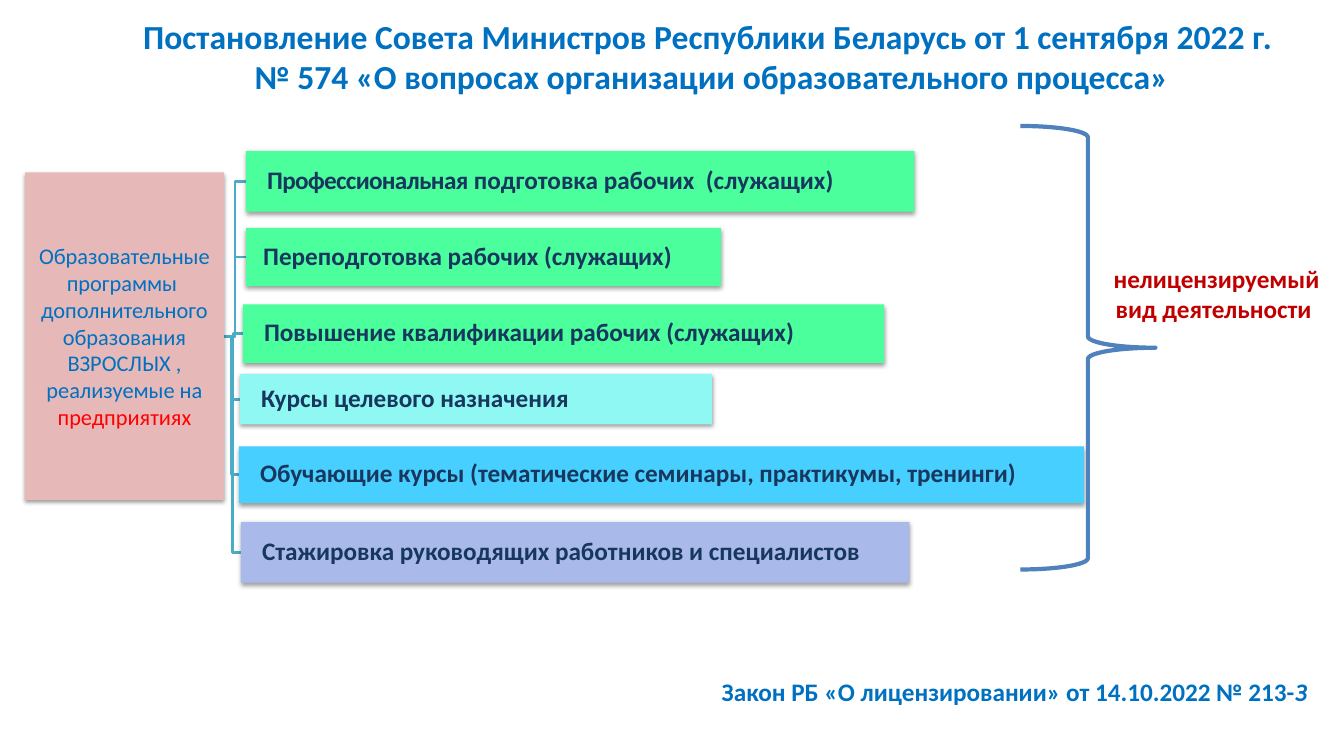
from lxml import etree
from pptx import Presentation
from pptx.dml.color import RGBColor
from pptx.enum.shapes import MSO_SHAPE
from pptx.enum.text import MSO_ANCHOR, PP_ALIGN
from pptx.oxml.ns import qn
from pptx.util import Inches, Pt

RECTANGLE = MSO_SHAPE.RECTANGLE
RIGHT_BRACE = MSO_SHAPE.RIGHT_BRACE
MIDDLE = MSO_ANCHOR.MIDDLE
CENTER = PP_ALIGN.CENTER
LEFT = PP_ALIGN.LEFT
BLUE = "0070C0"
NAVY = "17375E"
GREEN = "4BFF9C"


def color(value):
    return RGBColor.from_string(value)


def write(shape, parts, size, bold, align):
    frame = shape.text_frame
    para = frame.paragraphs[0]
    para.text = "".join(text for text, tone in parts[:1])
    for text, tone in parts[1:]:
        para.add_run().text = text
    para.alignment = align
    for position, span in enumerate(para.runs):
        tone = parts[min(position, len(parts) - 1)][1]
        span.font.name = "Calibri"
        span.font.size = Pt(size)
        span.font.bold = bold
        span.font.color.rgb = color(tone)
    return para


deck = Presentation()
deck.slide_width = Inches(13.33)
deck.slide_height = Inches(7.5)
page = deck.slides.add_slide(deck.slide_layouts[6])

root_left, root_top, root_width, root_height = 0.25, 1.71, 1.97, 3.25
root_right = root_left + root_width
root_middle = root_top + root_height / 2
root_parts = [
    ("Образовательные программы  дополнительного образования ВЗРОСЛЫХ , реализуемые на ", BLUE),
    ("предприятиях", "FF0000"),
]

programs = [
    (2.44, 1.5, 6.63, 0.6, GREEN, "Профессиональная подготовка рабочих  (служащих)"),
    (2.44, 2.26, 4.71, 0.58, GREEN, "Переподготовка рабочих (служащих)"),
    (2.41, 3.02, 6.36, 0.58, GREEN, "Повышение квалификации рабочих (служащих)"),
    (2.38, 3.71, 4.68, 0.5, "90F8F3", "Курсы целевого назначения"),
    (2.37, 4.43, 8.38, 0.56, "47CFFF",
     "Обучающие курсы (тематические семинары, практикумы, тренинги)"),
    (2.39, 5.18, 6.63, 0.6, "A8B9EA", "Стажировка руководящих работников и специалистов"),
]

for left, top, width, height, fill, text in programs:
    middle = top + height / 2
    bend = (root_right + left) / 2
    builder = page.shapes.build_freeform(Inches(root_right), Inches(root_middle))
    builder.add_line_segments(
        [(Inches(x), Inches(y)) for x, y in [(bend, root_middle), (bend, middle), (left, middle)]],
        close=False,
    )
    branch = builder.convert_to_shape()
    branch.shadow.inherit = False
    branch.fill.background()
    branch.line.color.rgb = color("4BACC6")
    branch.line.width = Pt(2)

boxes = [(root_left, root_top, root_width, root_height, "E6B9B8", root_parts, 16, False, CENTER, 0.01)]
for left, top, width, height, fill, text in programs:
    indent = 0.17 if text.startswith("Переподготовка") else 0.21
    boxes.append((left, top, width, height, fill, [(text, NAVY)], 18, True, LEFT, indent))

for left, top, width, height, fill, parts, size, bold, align, indent in boxes:
    box = page.shapes.add_shape(RECTANGLE, Inches(left), Inches(top), Inches(width), Inches(height))
    box.fill.solid()
    box.fill.fore_color.rgb = color(fill)
    box.line.fill.background()
    box.shadow.inherit = False
    effects = box._element.spPr.find(qn("a:effectLst"))
    shadow = etree.SubElement(effects, qn("a:outerShdw"), blurRad="40000", dist="20000",
                              dir="5400000", rotWithShape="0")
    shade = etree.SubElement(shadow, qn("a:srgbClr"), val="000000")
    etree.SubElement(shade, qn("a:alpha"), val="38000")
    frame = box.text_frame
    frame.word_wrap = True
    frame.vertical_anchor = MIDDLE
    frame.margin_left = Inches(indent)
    frame.margin_top = frame.margin_right = frame.margin_bottom = Inches(0.01)
    para = write(box, parts, size, bold, align)
    if align == LEFT:
        para.line_spacing = 0.9
    if parts[0][0].startswith("Профессиональная"):
        first_word, rest = parts[0][0].split(" ", 1)
        para = write(box, [(first_word, NAVY), (" " + rest, NAVY)], size, bold, align)
        para.runs[0].font._element.set("spc", "-50")

captions = [
    (1.07, 0.11, 11.9, 0.91, 24, CENTER, True,
     [("Постановление Совета Министров Республики Беларусь от 1 сентября 2022 г.\v"
       " № 574 «О вопросах организации образовательного процесса»", BLUE)]),
    (7.06, 6.66, 6.12, 0.4, 18, LEFT, False,
     [("Закон РБ «О лицензировании» от 14.10.2022 № 213-", BLUE), ("З", BLUE)]),
    (10.79, 2.56, 2.55, 0.71, 18, CENTER, True, [("нелицензируемый вид деятельности ", "C00000")]),
]
for left, top, width, height, size, align, wrap, parts in captions:
    caption = page.shapes.add_textbox(Inches(left), Inches(top), Inches(width), Inches(height))
    caption.text_frame.word_wrap = wrap
    para = write(caption, parts, size, True, align)
    if len(parts) == 2:
        para.runs[1].font.italic = True

brace = page.shapes.add_shape(RIGHT_BRACE, Inches(10.12), Inches(1.25), Inches(1.34), Inches(4.4))
brace.shadow.inherit = False
brace.fill.background()
brace.line.color.rgb = color("4F81BD")
brace.line.width = Pt(3)

deck.save("out.pptx")
